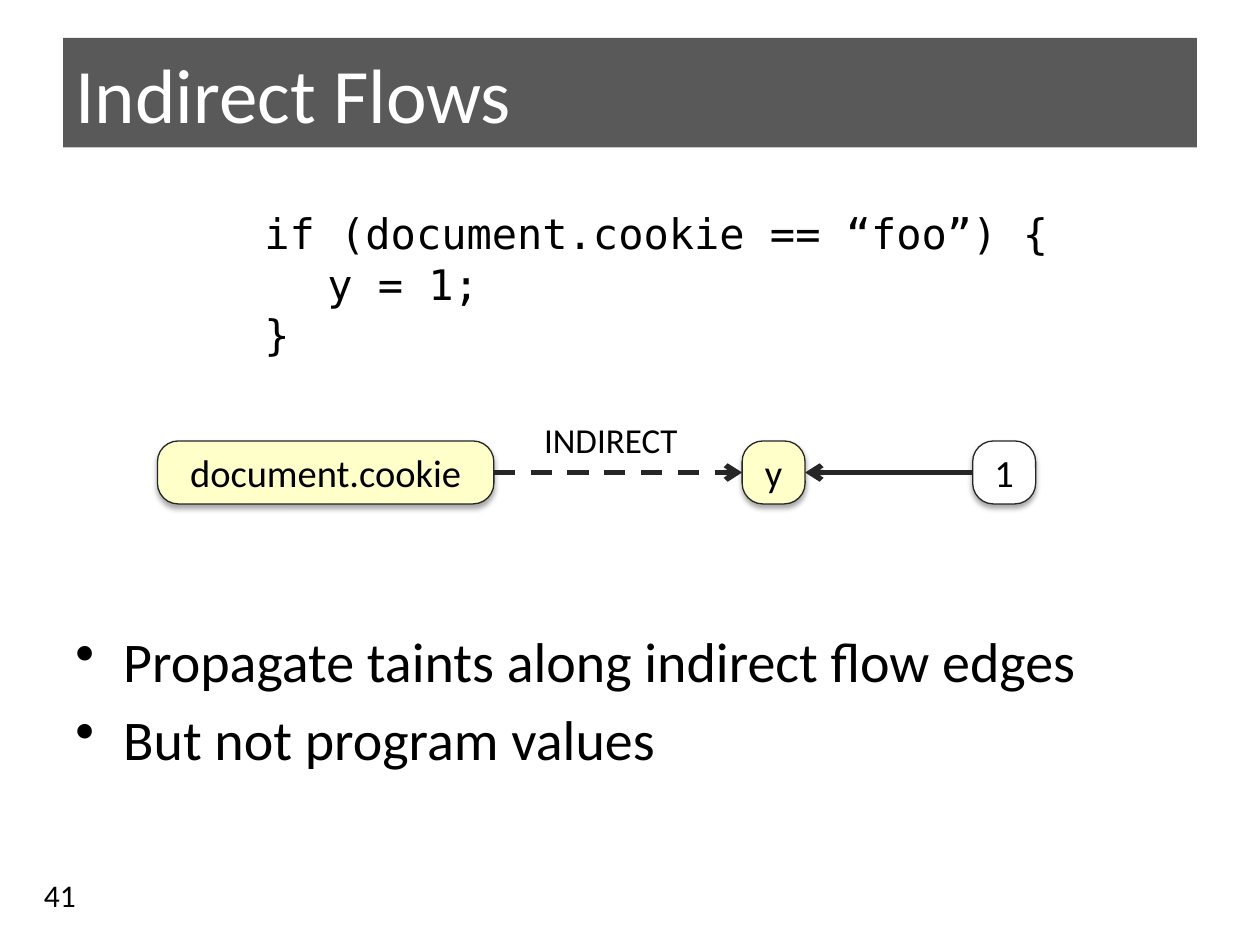
from lxml.etree import SubElement
from pptx import Presentation
from pptx.dml.color import RGBColor
from pptx.enum.dml import MSO_LINE
from pptx.enum.shapes import MSO_CONNECTOR, MSO_SHAPE
from pptx.enum.text import MSO_ANCHOR, PP_ALIGN
from pptx.oxml.ns import qn
from pptx.util import Inches, Pt

BLACK = RGBColor(0x00, 0x00, 0x00)
WHITE = RGBColor(0xFF, 0xFF, 0xFF)
TITLE_GRAY = RGBColor(0x59, 0x59, 0x59)
EDGE_GRAY = RGBColor(0x26, 0x26, 0x26)
TAINT_YELLOW = RGBColor(0xFF, 0xFF, 0xCA)
MARGIN = 0.5
CONTENT_WIDTH = 9
NODE_TOP = 3.5
NODE_SIZE = 0.5


def write(shape, lines, size, font="Calibri", color=BLACK, align=PP_ALIGN.LEFT,
          anchor=MSO_ANCHOR.TOP, indents=None, hanging=0, bullet=None, space_before=0, wrap=True):
    """Fill a shape with formatted paragraphs, one per line."""
    frame = shape.text_frame
    frame.word_wrap = wrap
    frame.vertical_anchor = anchor
    frame.text = "\n".join(lines)
    for index, paragraph in enumerate(frame.paragraphs):
        paragraph.alignment = align
        paragraph.space_before = Pt(space_before)
        paragraph.font.name = font
        paragraph.font.size = Pt(size)
        paragraph.font.color.rgb = color
        properties = paragraph._p.get_or_add_pPr()
        if indents:
            properties.set("marL", str(Inches(indents[index])))
            properties.set("indent", str(Inches(-hanging)))
        if bullet:
            mark = properties.makeelement(qn("a:buChar"), {"char": bullet})
            properties.insert_element_before(mark, "a:tabLst", "a:defRPr", "a:extLst")


def add_text(slide, left, top, width, height, lines, size, **text_format):
    """Add a text box."""
    box = slide.shapes.add_textbox(*map(Inches, (left, top, width, height)))
    write(box, lines, size, **text_format)


def add_shadow(shape):
    """Give a shape a soft shadow below it."""
    shape.shadow.inherit = False
    effects = shape._element.spPr.find(qn("a:effectLst"))
    shadow = SubElement(effects, qn("a:outerShdw"), blurRad=str(Pt(3.1)), dist=str(Pt(1.8)),
                        dir="5400000", rotWithShape="0")
    color = SubElement(shadow, qn("a:srgbClr"), val=str(BLACK))
    SubElement(color, qn("a:alpha"), val="35000")


def add_node(slide, left, width, label, fill):
    """Add a rounded node of the flow graph."""
    node = slide.shapes.add_shape(MSO_SHAPE.ROUNDED_RECTANGLE,
                                  *map(Inches, (left, NODE_TOP, width, NODE_SIZE)))
    node.adjustments[0] = 0.33
    node.fill.solid()
    node.fill.fore_color.rgb = fill
    node.line.color.rgb = EDGE_GRAY
    node.line.width = Pt(0.75)
    add_shadow(node)
    write(node, [label], 22, align=PP_ALIGN.CENTER, anchor=MSO_ANCHOR.MIDDLE, wrap=False)
    return node


def add_edge(slide, source, source_site, target, target_site, dash=None):
    """Connect two nodes with an arrow."""
    edge = slide.shapes.add_connector(MSO_CONNECTOR.STRAIGHT, 0, 0, 0, 0)
    edge.begin_connect(source, source_site)
    edge.end_connect(target, target_site)
    edge.line.color.rgb = EDGE_GRAY
    edge.line.width = Pt(3)
    if dash:
        edge.line.dash_style = dash
    SubElement(edge.line._get_or_add_ln(), qn("a:tailEnd"), type="arrow")
    SubElement(edge._element.spPr, qn("a:effectLst"))


def add_title(slide, text):
    """Format the title placeholder as a dark band."""
    title = slide.shapes.title
    title.left, title.top, title.width, title.height = map(
        Inches, (MARGIN, 0.3, CONTENT_WIDTH, 0.87))
    title.fill.solid()
    title.fill.fore_color.rgb = TITLE_GRAY
    write(title, [text], 44, color=WHITE, anchor=MSO_ANCHOR.MIDDLE)


def add_flow_graph(slide):
    """Draw the nodes and the direct and indirect flows between them."""
    cookie = add_node(slide, 1.25, 2.67, "document.cookie", TAINT_YELLOW)
    variable = add_node(slide, 5.89, NODE_SIZE, "y", TAINT_YELLOW)
    value = add_node(slide, 7.72, NODE_SIZE, "1", WHITE)
    left_site, right_site = 1, 3
    add_edge(slide, value, left_site, variable, right_site)
    add_edge(slide, cookie, right_site, variable, left_site, dash=MSO_LINE.DASH)
    add_text(slide, 4.22, 3.27, 1.33, 0.44, ["INDIRECT"], 20,
             anchor=MSO_ANCHOR.MIDDLE, wrap=False)


def main():
    """Build the slide and save it."""
    presentation = Presentation()
    presentation.slide_width, presentation.slide_height = Inches(10), Inches(7.5)
    slide = presentation.slides.add_slide(presentation.slide_layouts[5])
    add_title(slide, "Indirect Flows")
    add_text(slide, MARGIN, 1.6, CONTENT_WIDTH, 1.31,
             ["if (document.cookie == “foo”) {", "y = 1;", "}"], 24,
             font="DejaVu Sans Mono", indents=(1.5, 2, 1.5))
    add_flow_graph(slide)
    add_text(slide, MARGIN, 4.92, CONTENT_WIDTH, 2.25,
             ["Propagate taints along indirect flow edges", "But not program values"], 32,
             indents=(0.38, 0.38), hanging=0.38, bullet="•", space_before=6.4)
    add_text(slide, 0.25, 6.9, 2.33, 0.4, ["41"], 18, anchor=MSO_ANCHOR.BOTTOM)
    presentation.save("out.pptx")


if __name__ == "__main__":
    main()
